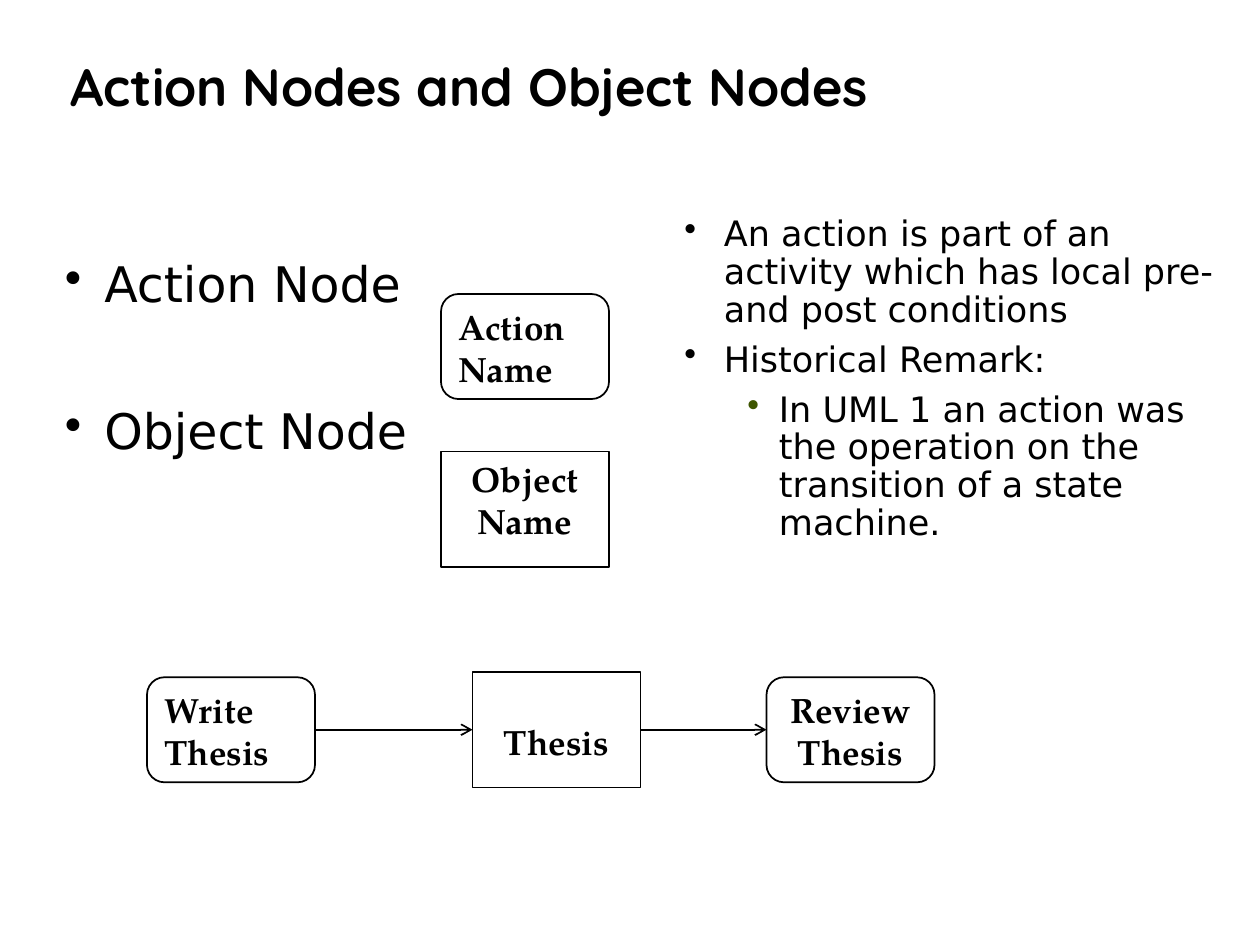
from dataclasses import dataclass

from lxml import etree
from pptx import Presentation
from pptx.dml.color import RGBColor
from pptx.enum import shapes, text
from pptx.oxml import ns
from pptx.util import Pt

BLACK = RGBColor(0x00, 0x00, 0x00)
WHITE = RGBColor(0xFF, 0xFF, 0xFF)
GREEN = RGBColor(0x3D, 0x55, 0x00)
TITLE_FONT, BODY_FONT, NODE_FONT = "Quicksand", "DejaVu Sans", "TeX Gyre Pagella"
NODE_WIDTH, ACTION_HEIGHT, OBJECT_HEIGHT = 96, 60, 66
LEFT, CENTER = text.PP_ALIGN.LEFT, text.PP_ALIGN.CENTER
LEFT_SITE, RIGHT_SITE = 1, 3


@dataclass
class Node:
    lines: list[str]
    left: float
    top: float
    is_action: bool
    align: text.PP_ALIGN = CENTER
    margin_top: float = 3.6


@dataclass
class Bullet:
    words: str
    before: float = 0
    after: float = 0
    level: int = 0


def write(paragraph, words: str, *, font: str, size: float, bold: bool = False,
          align=LEFT, spacing: float = 1, before: float = 0, after: float = 0) -> None:
    paragraph.alignment = align
    paragraph.line_spacing = spacing
    paragraph.space_before, paragraph.space_after = Pt(before), Pt(after)
    run = paragraph.add_run()
    run.text = words
    run.font.name, run.font.size, run.font.bold = font, Pt(size), bold
    run.font.color.rgb = BLACK


def paragraphs(frame, count: int) -> list:
    return [frame.paragraphs[0]] + [frame.add_paragraph() for _ in range(count - 1)]


def add_bullet_mark(paragraph, level: int) -> None:
    margin, indent, color = ((22.5, 22.5, BLACK), (54, 18, GREEN))[level]
    paragraph.level = level
    properties = paragraph._p.get_or_add_pPr()
    properties.set("marL", str(Pt(margin)))
    properties.set("indent", str(-Pt(indent)))
    bullet_color = etree.SubElement(properties, ns.qn("a:buClr"))
    etree.SubElement(bullet_color, ns.qn("a:srgbClr"), val=str(color))
    etree.SubElement(properties, ns.qn("a:buChar"), char="•")


def add_bullets(slide, bullets: list[Bullet], left: float, top: float, width: float,
                height: float, size: float, margin_top: float = 3.6) -> None:
    frame = slide.shapes.add_textbox(Pt(left), Pt(top), Pt(width), Pt(height)).text_frame
    frame.word_wrap = True
    frame.margin_top = Pt(margin_top)
    for paragraph, bullet in zip(paragraphs(frame, len(bullets)), bullets):
        write(paragraph, bullet.words, font=BODY_FONT, size=size, spacing=0.9,
              before=bullet.before, after=bullet.after)
        add_bullet_mark(paragraph, bullet.level)


def add_node(slide, node: Node):
    kind = shapes.MSO_SHAPE.ROUNDED_RECTANGLE if node.is_action else shapes.MSO_SHAPE.RECTANGLE
    height = ACTION_HEIGHT if node.is_action else OBJECT_HEIGHT
    shape = slide.shapes.add_shape(kind, Pt(node.left), Pt(node.top), Pt(NODE_WIDTH), Pt(height))
    shape.shadow.inherit = False
    shape.fill.solid()
    shape.fill.fore_color.rgb = WHITE
    shape.line.color.rgb = BLACK
    shape.line.width = Pt(1)
    frame = shape.text_frame
    frame.word_wrap = True
    frame.vertical_anchor = text.MSO_ANCHOR.TOP
    frame.margin_top = Pt(node.margin_top)
    for paragraph, line in zip(paragraphs(frame, len(node.lines)), node.lines):
        write(paragraph, line, font=NODE_FONT, size=20, bold=True, align=node.align)
    return shape


def add_arrow(slide, source, target) -> None:
    arrow = slide.shapes.add_connector(shapes.MSO_CONNECTOR.STRAIGHT, 0, 0, 0, 0)
    arrow.begin_connect(source, RIGHT_SITE)
    arrow.end_connect(target, LEFT_SITE)
    arrow.line.color.rgb = BLACK
    arrow.line.width = Pt(1)
    etree.SubElement(arrow.line._get_or_add_ln(), ns.qn("a:tailEnd"), type="arrow")
    etree.SubElement(arrow._element.spPr, ns.qn("a:effectLst"))


def main() -> None:
    presentation = Presentation()
    presentation.slide_width, presentation.slide_height = Pt(720), Pt(540)
    slide = presentation.slides.add_slide(presentation.slide_layouts[5])

    # Title
    title = slide.shapes.title
    title.left, title.top, title.width, title.height = Pt(33), Pt(17.5), Pt(642), Pt(67.5)
    title.text_frame.vertical_anchor = text.MSO_ANCHOR.MIDDLE
    write(title.text_frame.paragraphs[0], "Action Nodes and Object Nodes",
          font=TITLE_FONT, size=30, bold=True, spacing=0.9)

    # Node kinds on the left, remarks on the right
    add_bullets(slide, [Bullet("Action Node", after=6),
                        Bullet("Object Node", before=48, after=12)],
                30, 102, 348, 228, size=28, margin_top=46.5)
    add_bullets(slide, [
        Bullet("An action is part of an activity which has local pre- and post conditions"),
        Bullet("Historical Remark:", before=7),
        Bullet("In UML 1 an action was the operation on the transition of a state machine.",
               before=7, level=1),
    ], 384, 120, 336, 228, size=20)

    # Notation samples
    add_node(slide, Node(["Action", "Name"], 252, 168, True, LEFT))
    add_node(slide, Node(["Object", "Name"], 252, 258, False))

    # Example flow
    flow = [add_node(slide, node) for node in (
        Node(["Write", "Thesis"], 84, 387, True, LEFT),
        Node(["Thesis"], 270, 384, False, margin_top=27.6),
        Node(["Review", "Thesis"], 438, 387, True),
    )]
    for source, target in zip(flow, flow[1:]):
        add_arrow(slide, source, target)

    presentation.save("out.pptx")


if __name__ == "__main__":
    main()
